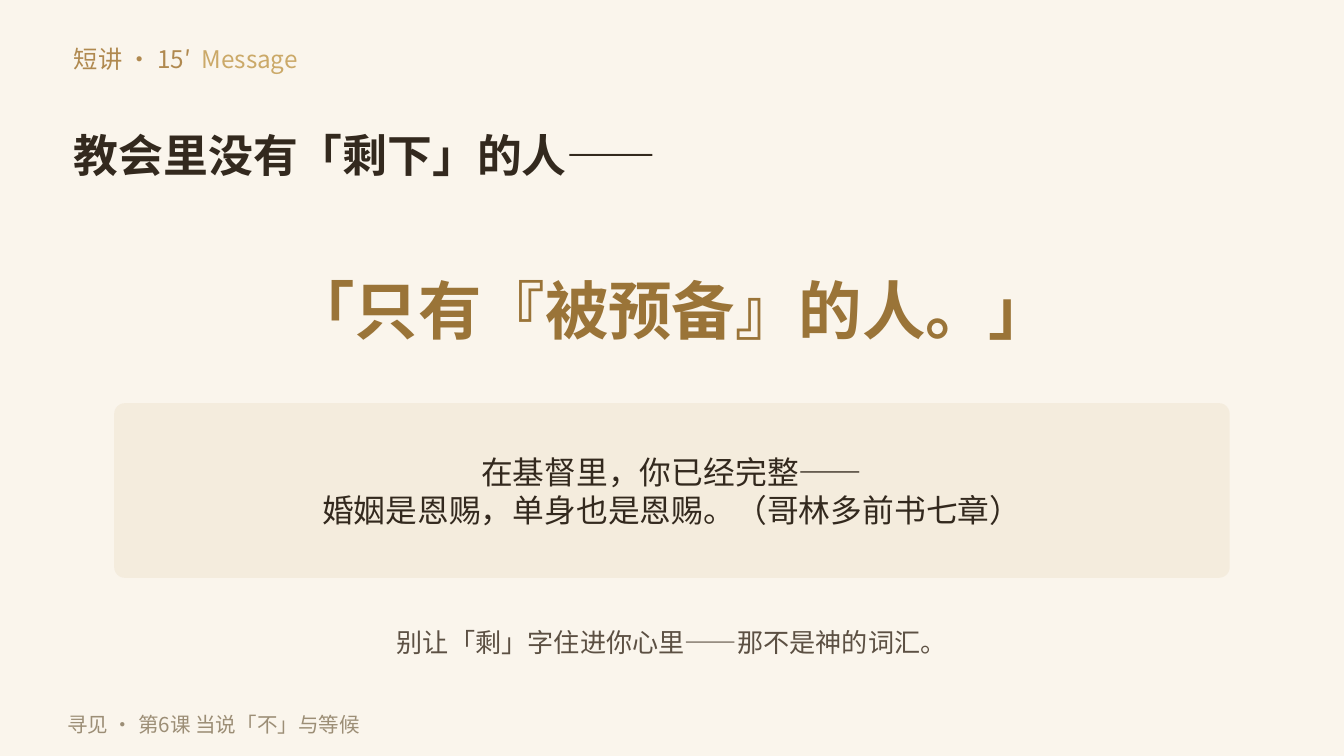
from lxml import etree
from pptx import Presentation
from pptx.dml.color import RGBColor
from pptx.enum.shapes import MSO_SHAPE
from pptx.enum.text import MSO_ANCHOR, PP_ALIGN
from pptx.oxml.ns import qn
from pptx.util import Inches, Pt

RECTANGLE = MSO_SHAPE.RECTANGLE
ROUNDED = MSO_SHAPE.ROUNDED_RECTANGLE
MIDDLE = MSO_ANCHOR.MIDDLE
LEFT, CENTER = PP_ALIGN.LEFT, PP_ALIGN.CENTER

FONT = "Noto Sans CJK SC"
BLANK_LAYOUT = 6
WIDTH = 10
HEIGHT = WIDTH * 9 / 16
COLORS = {
    "paper": "FAF5EC",
    "panel": "F4ECDD",
    "ink": "33291E",
    "soft_ink": "5C5043",
    "bronze": "9A7438",
    "label": "B0894F",
    "label_light": "CBA968",
    "footer": "9C8E76",
}


class SlideBuilder:
    """Holds the style and the current slide."""

    def __init__(self, slide):
        self.slide = slide

    def panel(self, left, top, width, height, color, kind=RECTANGLE, radius=None):
        shape = self.slide.shapes.add_shape(
            kind, Inches(left), Inches(top), Inches(width), Inches(height))
        shape.shadow.inherit = False
        shape.fill.solid()
        shape.fill.fore_color.rgb = RGBColor.from_string(COLORS[color])
        shape.line.fill.background()
        if radius is not None:
            shape.adjustments[0] = radius / min(width, height)

    def text(self, left, top, width, height, text, size, color,
             bold=False, align=LEFT):
        box = self.slide.shapes.add_textbox(
            Inches(left), Inches(top), Inches(width), Inches(height))
        frame = box.text_frame
        frame.word_wrap = True
        frame.vertical_anchor = MIDDLE
        frame.margin_left = frame.margin_right = 0
        frame.margin_top = frame.margin_bottom = 0
        frame.text = text
        for paragraph in frame.paragraphs:
            paragraph.alignment = align
            for run in paragraph.runs:
                self.format_run(run, size, color, bold)
        return box

    def add_run(self, box, text, size, color, spacing=None):
        run = box.text_frame.paragraphs[0].add_run()
        run.text = text
        self.format_run(run, size, color)
        if spacing is not None:
            run._r.get_or_add_rPr().set("spc", str(round(spacing * 100)))

    def format_run(self, run, size, color, bold=False):
        run.font.name = FONT
        run.font.size = Pt(size)
        run.font.bold = bold
        run.font.color.rgb = RGBColor.from_string(COLORS[color])
        # Chinese characters take the East Asian typeface
        east_asian = etree.SubElement(run._r.get_or_add_rPr(), qn("a:ea"))
        east_asian.set("typeface", FONT)


def main():
    presentation = Presentation()
    presentation.slide_width = Inches(WIDTH)
    presentation.slide_height = Inches(HEIGHT)
    layout = presentation.slide_layouts[BLANK_LAYOUT]
    builder = SlideBuilder(presentation.slides.add_slide(layout))

    # Paper background
    builder.panel(0, 0, WIDTH, HEIGHT, "paper")

    # Section label, with a widened space before the English word
    label = builder.text(0.55, 0.28, 8.5, 0.32, "短讲 · 15′", 13, "label")
    builder.add_run(label, " ", 13, "label", spacing=2.9)
    builder.add_run(label, "Message", 13, "label_light")

    # Title and key sentence
    builder.text(0.55, 0.9, 9, 0.5, "教会里没有「剩下」的人——", 24, "ink", bold=True)
    builder.text(0.5, 1.9, 9, 0.8, "「只有『被预备』的人。」", 34, "bronze",
                 bold=True, align=CENTER)

    # Scripture panel
    builder.panel(0.85, 3, 8.3, 1.3, "panel", ROUNDED, radius=0.08)
    builder.text(1.15, 3.25, 7.7, 0.8,
                 "在基督里，你已经完整——\n婚姻是恩赐，单身也是恩赐。（哥林多前书七章）",
                 17, "ink", align=CENTER)

    # Closing remark and footer
    builder.text(0.55, 4.6, 8.9, 0.35, "别让「剩」字住进你心里——那不是神的词汇。",
                 14, "soft_ink", align=CENTER)
    builder.text(0.5, 5.25, 7.5, 0.28, "寻见 · 第6课 当说「不」与等候", 11, "footer")

    presentation.save("out.pptx")


if __name__ == "__main__":
    main()
